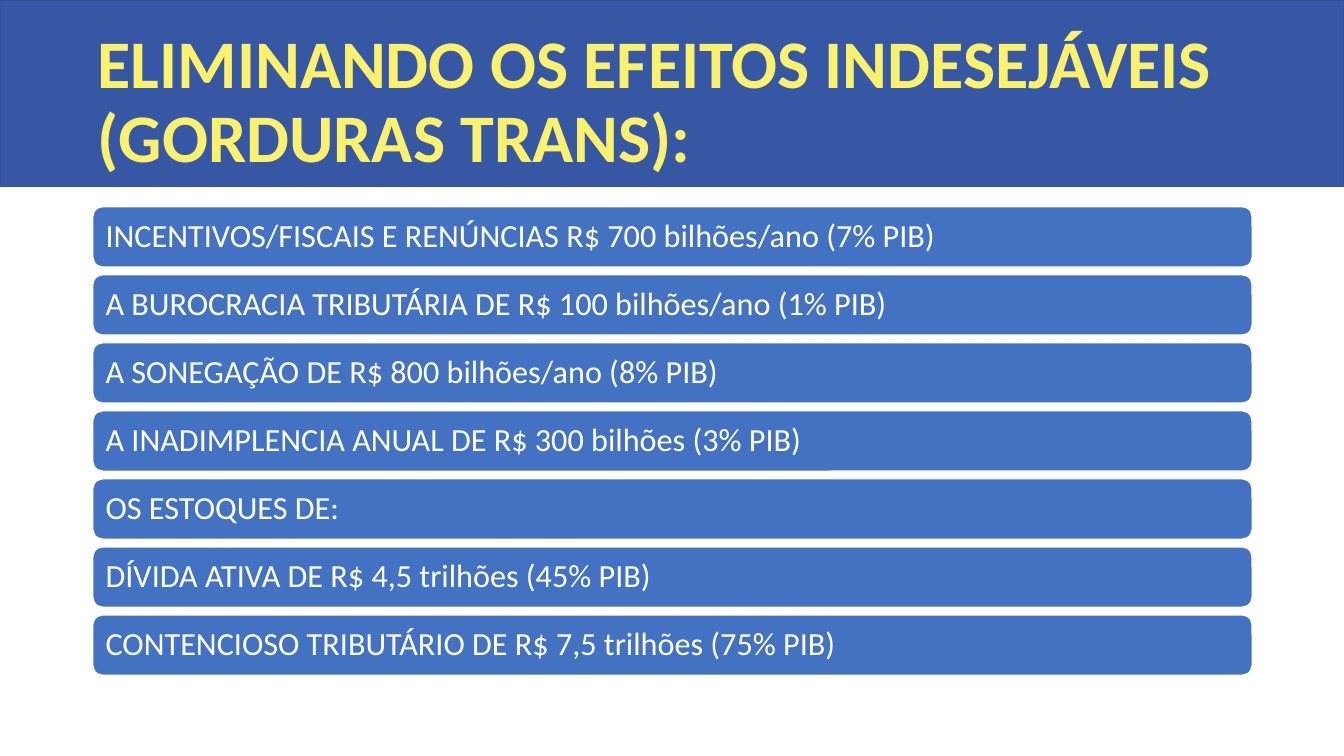
from dataclasses import dataclass

from pptx import Presentation
from pptx.dml.color import RGBColor
from pptx.enum.shapes import MSO_SHAPE as Preset
from pptx.enum.text import MSO_ANCHOR as Anchor, PP_ALIGN as Align
from pptx.util import Inches, Pt


@dataclass(frozen=True)
class Theme:
    """Colours, font and type sizes of the slide."""
    font: str = "Calibri"
    band: str = "3657A3"
    band_edge: str = "31538F"
    bar: str = "4372C3"
    white: str = "FFFFFF"
    heading: str = "FCF16C"
    heading_size: float = 48.6
    bar_size: float = 23


THEME = Theme()
HEADING = "ELIMINANDO OS EFEITOS INDESEJÁVEIS (GORDURAS TRANS):"
EFFECTS = [
    "INCENTIVOS/FISCAIS E RENÚNCIAS R$ 700 bilhões/ano (7% PIB)",
    "A BUROCRACIA TRIBUTÁRIA DE R$ 100 bilhões/ano (1% PIB)",
    "A SONEGAÇÃO DE R$ 800 bilhões/ano (8% PIB)",
    "A INADIMPLENCIA ANUAL DE R$ 300 bilhões (3% PIB)",
    "OS ESTOQUES DE:",
    "DÍVIDA ATIVA DE R$ 4,5 trilhões (45% PIB)",
    "CONTENCIOSO TRIBUTÁRIO DE R$ 7,5 trilhões (75% PIB)",
]


def add_panel(slide, preset, box, fill, edge):
    """Add a filled, outlined shape without shadow."""
    panel = slide.shapes.add_shape(preset, *map(Inches, box))
    panel.shadow.inherit = False
    panel.fill.solid()
    panel.fill.fore_color.rgb = RGBColor.from_string(fill)
    panel.line.color.rgb = RGBColor.from_string(edge)
    panel.line.width = Pt(1)
    return panel


def write(holder, wording, size, color, bold=False, inset=0.05):
    """Write one left-aligned, vertically centred paragraph."""
    frame = holder.text_frame
    frame.word_wrap = True
    frame.vertical_anchor = Anchor.MIDDLE
    frame.margin_left = frame.margin_right = Inches(0.1)
    frame.margin_top = frame.margin_bottom = Inches(inset)
    paragraph = frame.paragraphs[0]
    paragraph.text = wording
    paragraph.alignment = Align.LEFT
    paragraph.line_spacing = 0.9
    paragraph.font.name = THEME.font
    paragraph.font.size = Pt(size)
    paragraph.font.bold = bold
    paragraph.font.color.rgb = RGBColor.from_string(color)


def add_heading(slide, box):
    """Draw the heading band and its title inside the box."""
    left, top, width, height = box
    add_panel(slide, Preset.RECTANGLE, box, THEME.band, THEME.band_edge)
    title = slide.shapes.add_textbox(
        Inches(left + 0.87), Inches(top + 0.3),
        Inches(width - 1.83), Inches(height - 0.4))
    write(title, HEADING, THEME.heading_size, THEME.heading, bold=True)


def add_effects(slide, box, bar_height=0.6):
    """Spread one bar per effect evenly over the box."""
    left, top, width, height = box
    pitch = (height - bar_height) / (len(EFFECTS) - 1)
    for row, effect in enumerate(EFFECTS):
        bar = add_panel(slide, Preset.ROUNDED_RECTANGLE,
                        (left, top + row * pitch, width, bar_height),
                        THEME.bar, THEME.white)
        write(bar, effect, THEME.bar_size, THEME.white, inset=0.1)


def main():
    """Build and save the slide."""
    deck = Presentation()
    deck.slide_width, deck.slide_height = Inches(13.33), Inches(7.5)
    slide = deck.slides.add_slide(deck.slide_layouts[6])
    add_heading(slide, (0, 0, 13.33, 1.85))
    add_effects(slide, (0.92, 2.05, 11.5, 4.65))
    deck.save("out.pptx")


if __name__ == "__main__":
    main()
